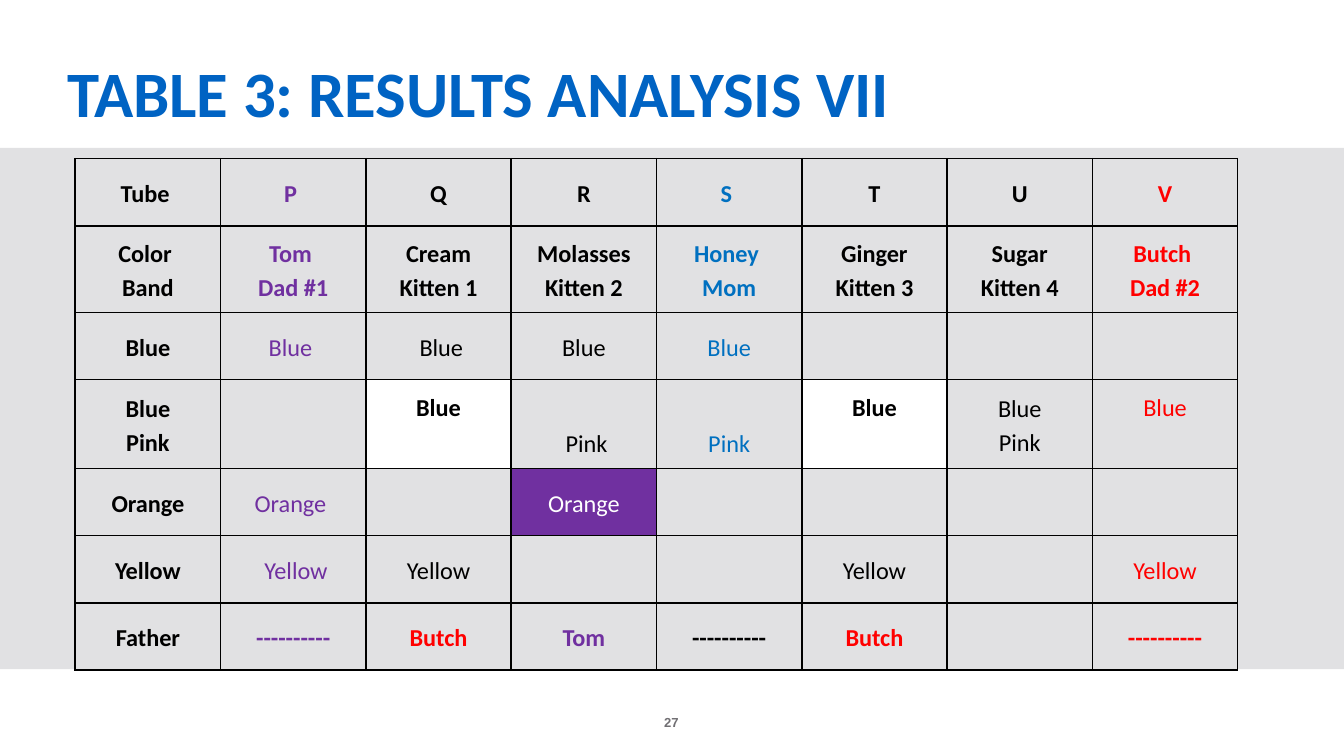
from pptx import Presentation
from pptx.dml.color import RGBColor
from pptx.enum.shapes import MSO_SHAPE
from pptx.enum.text import MSO_ANCHOR, PP_ALIGN
from pptx.oxml import parse_xml
from pptx.oxml.ns import nsdecls
from pptx.util import Inches, Pt

# Content
TITLE = "TABLE 3: RESULTS ANALYSIS VII"
PAGE_NUMBER = "27"
RESULTS = [
    ["Tube ", "P ", "Q", "R", "S ", "T", "U", "V"],
    ["Color \nBand", "Tom \nDad #1", "Cream\nKitten 1", "Molasses\nKitten 2",
     "Honey \nMom", "Ginger\nKitten 3", "Sugar\nKitten 4", "Butch \nDad #2"],
    ["Blue", "Blue ", " Blue", "Blue", "Blue", "", "", ""],
    ["Blue\nPink", "", "Blue", " Pink", "Pink", "Blue", "Blue\nPink", "Blue"],
    ["Orange", "Orange ", "", "Orange", "", "", "", ""],
    ["Yellow", " Yellow", "Yellow", "", "", "Yellow", "", "Yellow"],
    ["Father", "----------", "Butch", "Tom", "----------", "Butch", "", "----------"],
]
BAND_PAIR_ROW, FATHER_ROW = 3, 6
BOLD_ROWS = {0, 1, FATHER_ROW}

THEME = {
    "title": {"name": "Calibri", "size": Pt(34.7), "bold": True, "color": "0063C3"},
    "number": {"name": "Arial", "size": Pt(7), "bold": True, "color": "716F73"},
    "cell": {"name": "Calibri", "size": Pt(13)},
    "panel": "E1E1E3", "black": "000000", "white": "FFFFFF",
    "tom": "7030A0", "mom": "0070C0", "butch": "FF0000",
}
PARENT_COLUMNS = {1: THEME["tom"], 4: THEME["mom"], 7: THEME["butch"]}
FATHER_COLORS = {2: THEME["butch"], 3: THEME["tom"], 4: THEME["black"], 5: THEME["butch"]}
HIGHLIGHTS = {(3, 2): THEME["white"], (3, 5): THEME["white"], (4, 3): THEME["tom"]}

# Layout
TABLE_WIDTH = 8.65
ROW_HEIGHTS = [0.5, 0.64, 0.5, 0.66, 0.5, 0.5, 0.5]
CELL_MARGIN = 0.07


def apply_format(target, values):
    for attribute, value in values.items():
        if attribute == "color":
            target.color.rgb = RGBColor.from_string(value)
        else:
            setattr(target, attribute, value)


def add_borders(cell):
    properties = cell._tc.get_or_add_tcPr()
    for side in "LRTB":
        properties.append(parse_xml(
            f'<a:ln{side} {nsdecls("a")} w="{Pt(1)}"><a:solidFill>'
            f'<a:srgbClr val="{THEME["black"]}"/></a:solidFill></a:ln{side}>'))


def text_color(row, column):
    if (row, column) == (4, 3):
        return THEME["white"]
    if row == FATHER_ROW and column in FATHER_COLORS:
        return FATHER_COLORS[column]
    return PARENT_COLUMNS.get(column, THEME["black"])


def cell_anchor(row, text):
    """In the two-band row, a lone upper band sits high and a lower one low."""
    if row != BAND_PAIR_ROW or "\n" in text:
        return MSO_ANCHOR.MIDDLE
    return MSO_ANCHOR.BOTTOM if "Pink" in text else MSO_ANCHOR.TOP


def fill_cell(cell, row, column, text):
    add_borders(cell)
    highlight = HIGHLIGHTS.get((row, column))
    if highlight:
        cell.fill.solid()
        cell.fill.fore_color.rgb = RGBColor.from_string(highlight)
    else:
        cell.fill.background()
    margins = {f"margin_{side}": Inches(CELL_MARGIN)
               for side in ("left", "right", "top", "bottom")}
    apply_format(cell, {**margins, "vertical_anchor": cell_anchor(row, text)})
    cell.text = text
    bold = (row in BOLD_ROWS or column == 0
            or highlight == THEME["white"])
    for paragraph in cell.text_frame.paragraphs:
        apply_format(paragraph, {"alignment": PP_ALIGN.CENTER, "line_spacing": 1.15})
        font_values = {**THEME["cell"], "bold": bold, "color": text_color(row, column)}
        for run in paragraph.runs:
            apply_format(run.font, font_values)


def main():
    deck = Presentation()
    deck.slide_width = Inches(10)
    deck.slide_height = deck.slide_width * 9 // 16
    slide = deck.slides.add_slide(deck.slide_layouts[5])

    # Grey panel behind the table
    panel = slide.shapes.add_shape(
        MSO_SHAPE.RECTANGLE, 0, Inches(1.1), deck.slide_width, Inches(3.88))
    panel.shadow.inherit = False
    panel.fill.solid()
    panel.fill.fore_color.rgb = RGBColor.from_string(THEME["panel"])
    panel.line.fill.background()

    # Title
    title = slide.shapes.title
    apply_format(title, {"left": Inches(0.4), "top": Inches(0.34),
                         "width": Inches(9.2), "height": Inches(0.68)})
    title.text_frame.text = TITLE
    title.text_frame.vertical_anchor = MSO_ANCHOR.BOTTOM
    heading = title.text_frame.paragraphs[0]
    heading.alignment = PP_ALIGN.LEFT
    apply_format(heading.runs[0].font, THEME["title"])

    # Results table
    results = slide.shapes.add_table(
        len(RESULTS), len(RESULTS[0]), Inches(0.56), Inches(1.18),
        Inches(TABLE_WIDTH), Inches(sum(ROW_HEIGHTS))).table
    apply_format(results, {"first_row": False, "horz_banding": False})
    for column in results.columns:
        column.width = Inches(TABLE_WIDTH / len(RESULTS[0]))
    for row, texts in enumerate(RESULTS):
        results.rows[row].height = Inches(ROW_HEIGHTS[row])
        for column, text in enumerate(texts):
            fill_cell(results.cell(row, column), row, column, text)

    # Page number
    number = slide.shapes.add_textbox(
        Inches(4.54), Inches(5.13), Inches(0.91), Inches(0.3)).text_frame
    apply_format(number, {"margin_left": 0, "margin_right": 0, "margin_top": 0,
                          "margin_bottom": 0, "word_wrap": True,
                          "vertical_anchor": MSO_ANCHOR.BOTTOM, "text": PAGE_NUMBER})
    number.paragraphs[0].alignment = PP_ALIGN.CENTER
    apply_format(number.paragraphs[0].runs[0].font, THEME["number"])

    deck.save("out.pptx")


if __name__ == "__main__":
    main()
